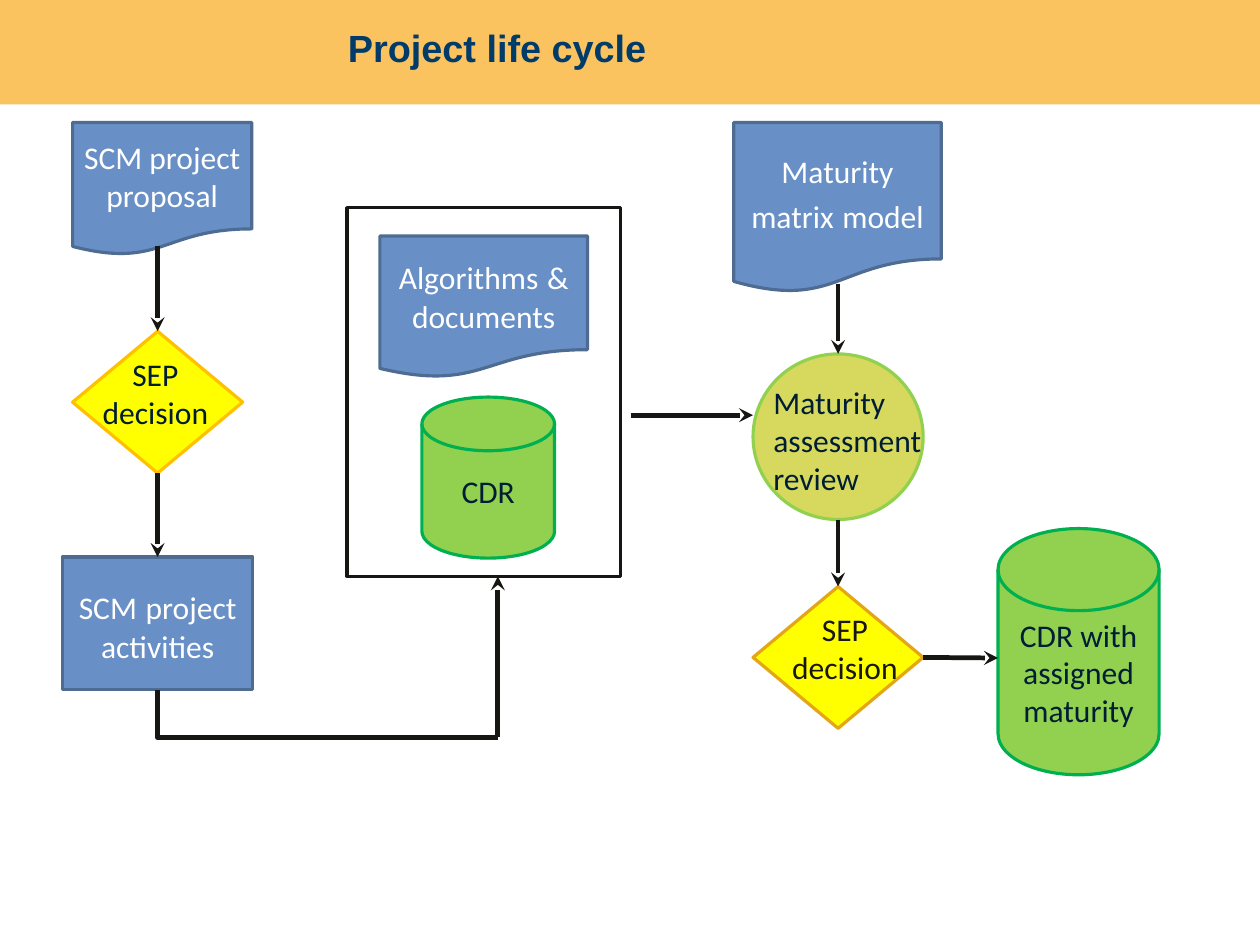
from dataclasses import dataclass

from lxml import etree
from pptx import Presentation
from pptx.dml.color import RGBColor
from pptx.enum.shapes import MSO_CONNECTOR as CONN, MSO_SHAPE as SHAPE
from pptx.enum.text import MSO_ANCHOR as ANCHOR, PP_ALIGN as ALIGN
from pptx.oxml.ns import qn
from pptx.util import Inches, Pt

WHITE = RGBColor(0xFF, 0xFF, 0xFF)
BLACK = RGBColor(0x18, 0x16, 0x13)
CHARCOAL = RGBColor(0x16, 0x17, 0x16)
NAVY = RGBColor(0x00, 0x1D, 0x34)
TITLE_BLUE = RGBColor(0x00, 0x3B, 0x69)
ORANGE = RGBColor(0xFA, 0xC3, 0x60)
BLUE = RGBColor(0x69, 0x90, 0xC6)
DARK_BLUE = RGBColor(0x4E, 0x6B, 0x92)
YELLOW = RGBColor(0xFF, 0xFF, 0x00)
AMBER = RGBColor(0xFF, 0xC0, 0x00)
GOLD = RGBColor(0xE3, 0xA7, 0x16)
LIME = RGBColor(0x92, 0xD0, 0x50)
GREEN = RGBColor(0x00, 0xB0, 0x50)
OLIVE = RGBColor(0xD6, 0xD9, 0x5E)

Box = tuple[float, float, float, float]
Point = tuple[float, float]
TOP, BOTTOM, RIGHT = 0, 2, 3


@dataclass
class Node:
    name: str
    preset: SHAPE
    box: Box
    fill: RGBColor | None
    line: RGBColor | None
    text: str = ""
    color: RGBColor = WHITE
    gap_size: int = 20


@dataclass
class Label:
    box: Box
    lines: tuple[str, ...]
    color: RGBColor
    align: ALIGN = ALIGN.LEFT
    font: str = "Calibri"
    size: int = 20
    bold: bool = False


@dataclass
class Link:
    start: Point
    end: Point
    source: tuple[str, int] | None = None
    target: tuple[str, int] | None = None
    arrow: bool = True
    bent: bool = False


NODES = [
    Node("band", SHAPE.RECTANGLE, (0, 0, 11.11, 0.92), ORANGE, None),
    Node("proposal", SHAPE.FLOWCHART_DOCUMENT, (0.64, 1.08, 1.58, 1.17),
         BLUE, DARK_BLUE, "SCM project proposal"),
    Node("activities", SHAPE.RECTANGLE, (0.55, 4.91, 1.68, 1.17),
         BLUE, DARK_BLUE, "SCM project activities", gap_size=24),
    Node("products", SHAPE.RECTANGLE, (3.06, 1.83, 2.41, 3.25), None, BLACK),
    Node("algorithms", SHAPE.FLOWCHART_DOCUMENT, (3.35, 2.08, 1.83, 1.25),
         BLUE, DARK_BLUE, "Algorithms & documents", gap_size=24),
    Node("matrix", SHAPE.FLOWCHART_DOCUMENT, (6.47, 1.08, 1.83, 1.5),
         BLUE, DARK_BLUE, "Maturity matrix model", gap_size=24),
    Node("review", SHAPE.OVAL, (6.64, 3.12, 1.5, 1.46), OLIVE, LIME),
    Node("first decision", SHAPE.DIAMOND, (0.64, 2.92, 1.5, 1.25), YELLOW, AMBER),
    Node("second decision", SHAPE.DIAMOND, (6.64, 5.17, 1.5, 1.25), YELLOW, GOLD),
    Node("CDR", SHAPE.FLOWCHART_MAGNETIC_DISK, (3.72, 3.5, 1.17, 1.42),
         LIME, GREEN, "CDR", NAVY),
    Node("mature CDR", SHAPE.FLOWCHART_MAGNETIC_DISK, (8.8, 4.66, 1.42, 2.17),
         LIME, GREEN, "CDR with assigned maturity", NAVY),
]

LABELS = [
    Label((6.72, 3.33, 1.92, 1.11), ("Maturity assessment review",), NAVY),
    Label((0.78, 3.08, 1.18, 0.77), ("SEP", "decision"), NAVY, ALIGN.CENTER),
    Label((6.86, 5.33, 1.18, 0.77), ("SEP", "decision"), CHARCOAL, ALIGN.CENTER),
    Label((2.97, 0.17, 5.17, 0.5), ("Project life cycle",), TITLE_BLUE,
          font="Arial", size=24, bold=True),
]

LINKS = [
    Link((1.39, 2.17), (1.39, 2.92), target=("first decision", TOP)),
    Link((1.39, 4.17), (1.39, 4.91), ("first decision", BOTTOM), ("activities", TOP)),
    Link((7.39, 2.5), (7.39, 3.12), target=("review", TOP)),
    Link((7.39, 4.58), (7.39, 5.17), target=("second decision", TOP)),
    Link((5.56, 3.66), (6.64, 3.66)),
    Link((8.14, 5.8), (8.8, 5.8), ("second decision", RIGHT)),
    Link((4.39, 6.5), (1.39, 6.08), target=("activities", BOTTOM),
         arrow=False, bent=True),
    Link((4.39, 6.5), (4.39, 5.08)),
]


def add_run(p, text: str, size: int, color: RGBColor,
            font: str = "Calibri", bold: bool = False) -> None:
    r = p.add_run()
    r.text = text
    r.font.name, r.font.size, r.font.bold = font, Pt(size), bold
    r.font.color.rgb = color


def draw_node(shapes, node: Node):
    sp = shapes.add_shape(node.preset, *map(Inches, node.box))
    sp.shadow.inherit = False
    if node.fill is None:
        sp.fill.background()
    else:
        sp.fill.solid()
        sp.fill.fore_color.rgb = node.fill
    if node.line is None:
        sp.line.fill.background()
    else:
        sp.line.color.rgb = node.line
        sp.line.width = Pt(2)
    if node.text:
        tf = sp.text_frame
        tf.word_wrap = True
        tf.vertical_anchor = ANCHOR.MIDDLE
        tf.margin_left = tf.margin_right = Inches(0.05)
        p = tf.paragraphs[0]
        p.alignment = ALIGN.CENTER
        for i, word in enumerate(node.text.split()):
            if i:
                add_run(p, " ", node.gap_size, node.color)
            add_run(p, word, 20, node.color)
    return sp


def draw_label(shapes, label: Label) -> None:
    tf = shapes.add_textbox(*map(Inches, label.box)).text_frame
    tf.word_wrap = True
    for i, line in enumerate(label.lines):
        p = tf.add_paragraph() if i else tf.paragraphs[0]
        p.alignment = label.align
        add_run(p, line, label.size, label.color, label.font, label.bold)


def draw_link(shapes, link: Link, nodes: dict) -> None:
    kind = CONN.ELBOW if link.bent else CONN.STRAIGHT
    line = shapes.add_connector(kind, *map(Inches, link.start + link.end))
    if link.source:
        name, side = link.source
        line.begin_connect(nodes[name], side)
    if link.target:
        name, side = link.target
        line.end_connect(nodes[name], side)
    line.line.color.rgb = BLACK
    line.line.width = Pt(3)
    sp_pr = line._element.spPr
    if link.bent:
        sp_pr.find(qn("a:prstGeom")).set("prst", "bentConnector2")
    if link.arrow:
        etree.SubElement(sp_pr.find(qn("a:ln")), qn("a:tailEnd"), type="stealth")
    etree.SubElement(sp_pr, qn("a:effectLst"))


def main() -> None:
    prs = Presentation()
    prs.slide_width, prs.slide_height = Inches(11.11), Inches(8.33)
    shapes = prs.slides.add_slide(prs.slide_layouts[6]).shapes
    nodes = {node.name: draw_node(shapes, node) for node in NODES}
    for link in LINKS:
        draw_link(shapes, link, nodes)
    for label in LABELS:
        draw_label(shapes, label)
    prs.save("out.pptx")


if __name__ == "__main__":
    main()
